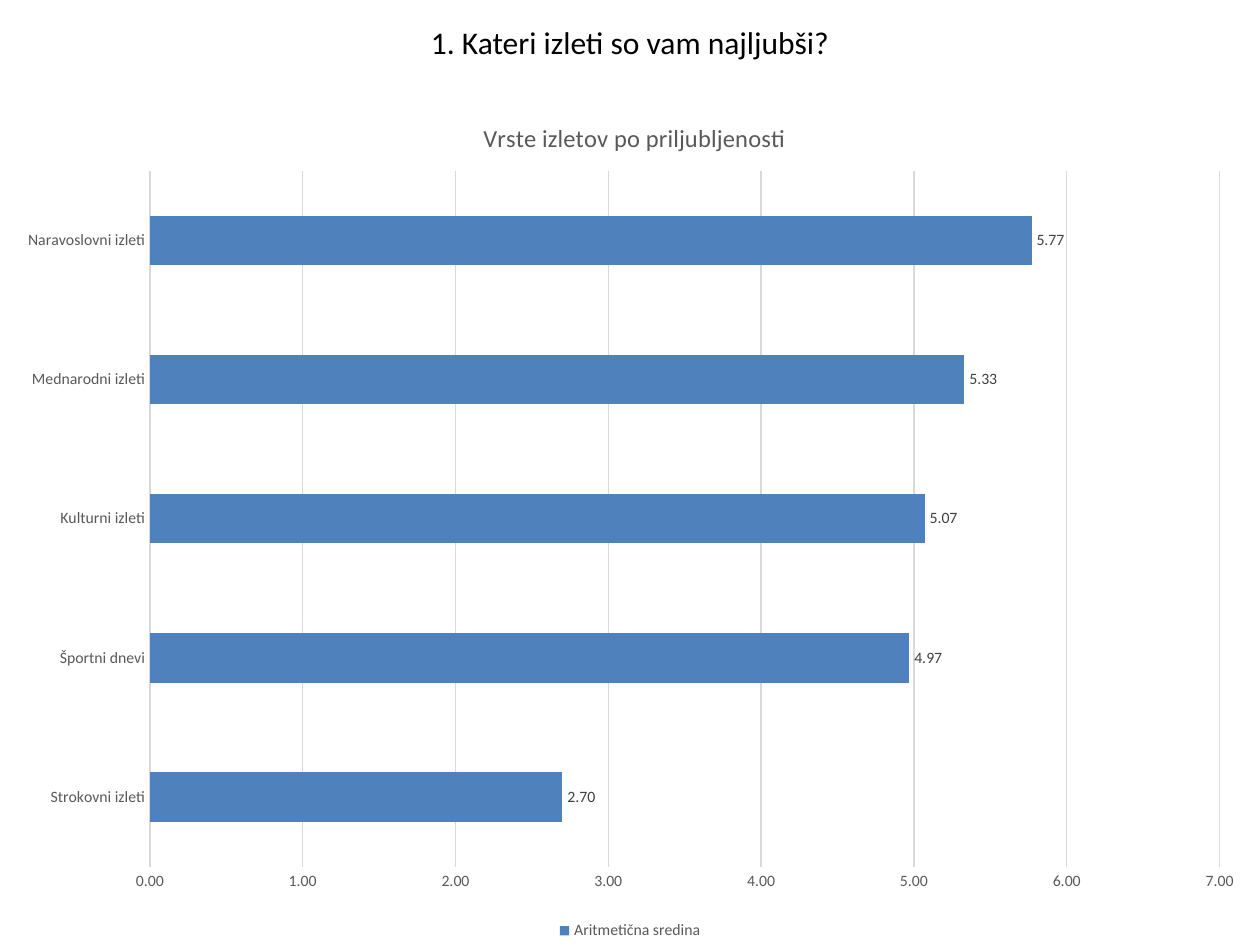
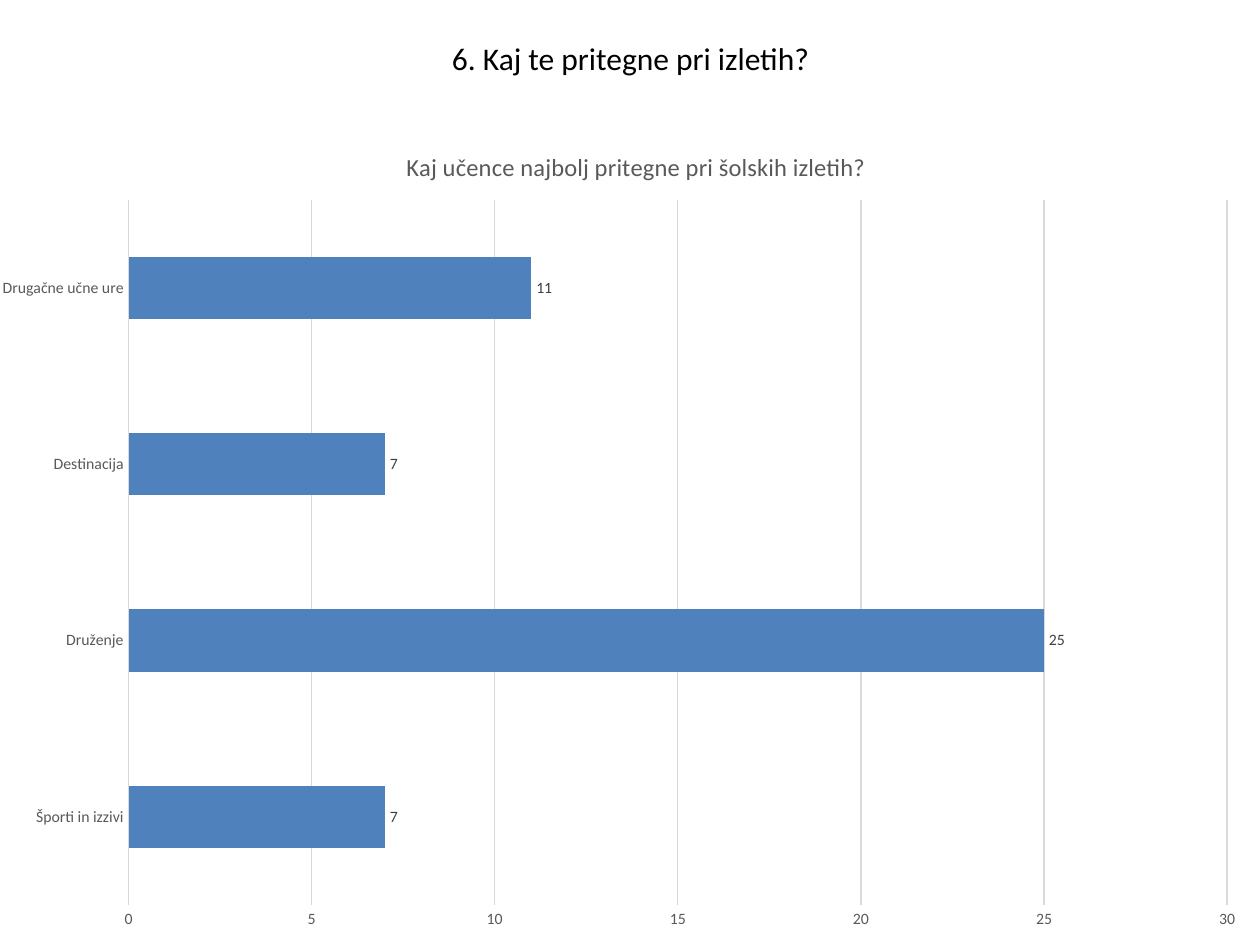
from lxml.etree import SubElement
from pptx import Presentation
from pptx.chart.data import CategoryChartData as Data
from pptx.dml.color import RGBColor
from pptx.enum.chart import XL_CHART_TYPE as Kind, XL_LABEL_POSITION as Spot
from pptx.enum.chart import XL_LEGEND_POSITION as Side, XL_TICK_MARK as Tick
from pptx.enum.text import MSO_ANCHOR as Anchor, PP_ALIGN as Align
from pptx.oxml.ns import qn
from pptx.util import Inches, Pt

BLACK = RGBColor(0x00, 0x00, 0x00)
GREY = RGBColor(0x59, 0x59, 0x59)
DARK = RGBColor(0x40, 0x40, 0x40)
PALE = RGBColor(0xD9, 0xD9, 0xD9)
BLUE = RGBColor(0x4F, 0x81, 0xBD)
FACE = "Calibri"
WIDE, HIGH = 10, 7.5


def style(item, **values):
    for name, value in values.items():
        setattr(item, name, value)


def place(layout, **parts):
    """Fix a chart part, with lengths as shares of the chart."""
    manual = SubElement(layout, qn("c:manualLayout"))
    for name, value in parts.items():
        SubElement(manual, qn(f"c:{name}")).set("val", str(value))


class Deck:
    def __init__(self):
        self.prs = Presentation()
        style(self.prs, slide_width=Inches(WIDE), slide_height=Inches(HIGH))
        self.slide = None

    def font(self, font, size, color):
        style(font, name=FACE, size=Pt(size), bold=False)
        font.color.rgb = color

    def line(self, line):
        line.color.rgb = PALE
        line.width = Pt(0.75)

    def page(self, text, left, top, width):
        self.slide = self.prs.slides.add_slide(self.prs.slide_layouts[5])
        title = self.slide.shapes.title
        style(title, left=Inches(left), top=Inches(top),
              width=Inches(width), height=Inches(0.4))
        frame = title.text_frame
        style(frame, text=text, word_wrap=True, vertical_anchor=Anchor.TOP)
        para = frame.paragraphs[0]
        para.alignment = Align.CENTER
        self.font(para.font, 18, BLACK)

    def bars(self, head, top, name, rows, step, end, fmt, plot, indent, legend=False):
        """Draw a bar chart from top to the foot; plot is x, y, w, h as shares."""
        data = Data(number_format=fmt)
        data.categories = [label for label, _ in rows]
        data.add_series(name, [value for _, value in rows])
        chart = self.slide.shapes.add_chart(
            Kind.BAR_CLUSTERED, 0, Inches(top), Inches(WIDE),
            Inches(HIGH - top), data).chart
        self.font(chart.font, 10, BLACK)
        self.head(chart, head, indent)
        chart.has_legend = legend
        if legend:
            style(chart.legend, position=Side.BOTTOM, include_in_layout=False)
            self.font(chart.legend.font, 9, GREY)
        self.axes(chart, step, end, fmt)
        self.series(chart.plots[0], fmt)
        area = chart.element.find(".//" + qn("c:plotArea"))
        layout = area.find(qn("c:layout"))
        if layout is None:
            layout = SubElement(area, qn("c:layout"))
            area.insert(0, layout)
        x, y, w, h = plot
        place(layout, layoutTarget="inner", xMode="edge", yMode="edge",
              x=x, y=y, w=w, h=h)

    def head(self, chart, text, indent):
        chart.has_title = True
        frame = chart.chart_title.text_frame
        frame.text = text
        self.font(frame.paragraphs[0].runs[0].font, 14, GREY)
        title = chart.element.find(".//" + qn("c:title"))
        layout = title.find(qn("c:layout"))
        if layout is None:
            layout = SubElement(title, qn("c:layout"))
            title.find(qn("c:tx")).addnext(layout)
        place(layout, xMode="edge", yMode="edge", x=indent, y=0.036)

    def axes(self, chart, step, end, fmt):
        cats, vals = chart.category_axis, chart.value_axis
        for axis in (cats, vals):
            style(axis, major_tick_mark=Tick.NONE, minor_tick_mark=Tick.NONE)
            self.font(axis.tick_labels.font, 9, GREY)
        self.line(cats.format.line)
        style(vals, minimum_scale=0, maximum_scale=end, major_unit=step,
              has_major_gridlines=True)
        vals.format.line.fill.background()
        self.line(vals.major_gridlines.format.line)
        style(vals.tick_labels, number_format=fmt, number_format_is_linked=False)

    def series(self, plot, fmt):
        style(plot, gap_width=182, vary_by_categories=False, has_data_labels=True)
        fill = plot.series[0].format.fill
        fill.solid()
        fill.fore_color.rgb = BLUE
        labels = plot.data_labels
        style(labels, show_value=True, position=Spot.OUTSIDE_END,
              number_format=fmt, number_format_is_linked=False)
        self.font(labels.font, 9, DARK)


def main():
    deck = Deck()
    deck.page("1. Kateri izleti so vam najljubši?", 1.3, 0.13, 7.4)
    trips = [("Strokovni izleti", 2.7), ("Športni dnevi", 4.97),
             ("Kulturni izleti", 5.07), ("Mednarodni izleti", 5.33),
             ("Naravoslovni izleti", 5.77)]
    deck.bars("Vrste izletov po priljubljenosti", 0.68, "Aritmetična sredina",
              trips, 1, 7, "0.00", (0.119, 0.099, 0.849, 0.81), 0.38, legend=True)

    deck.page("6. Kaj te pritegne pri izletih?", 1.19, 0.26, 7.63)
    draws = [("Športi in izzivi", 7), ("Druženje", 25),
             ("Destinacija", 7), ("Drugačne učne ure", 11)]
    deck.bars("Kaj učence najbolj pritegne pri šolskih izletih?", 0.92, "Series 1",
              draws, 5, 30, "General", (0.102, 0.101, 0.872, 0.851), 0.319)
    deck.prs.save("out.pptx")


if __name__ == "__main__":
    main()
